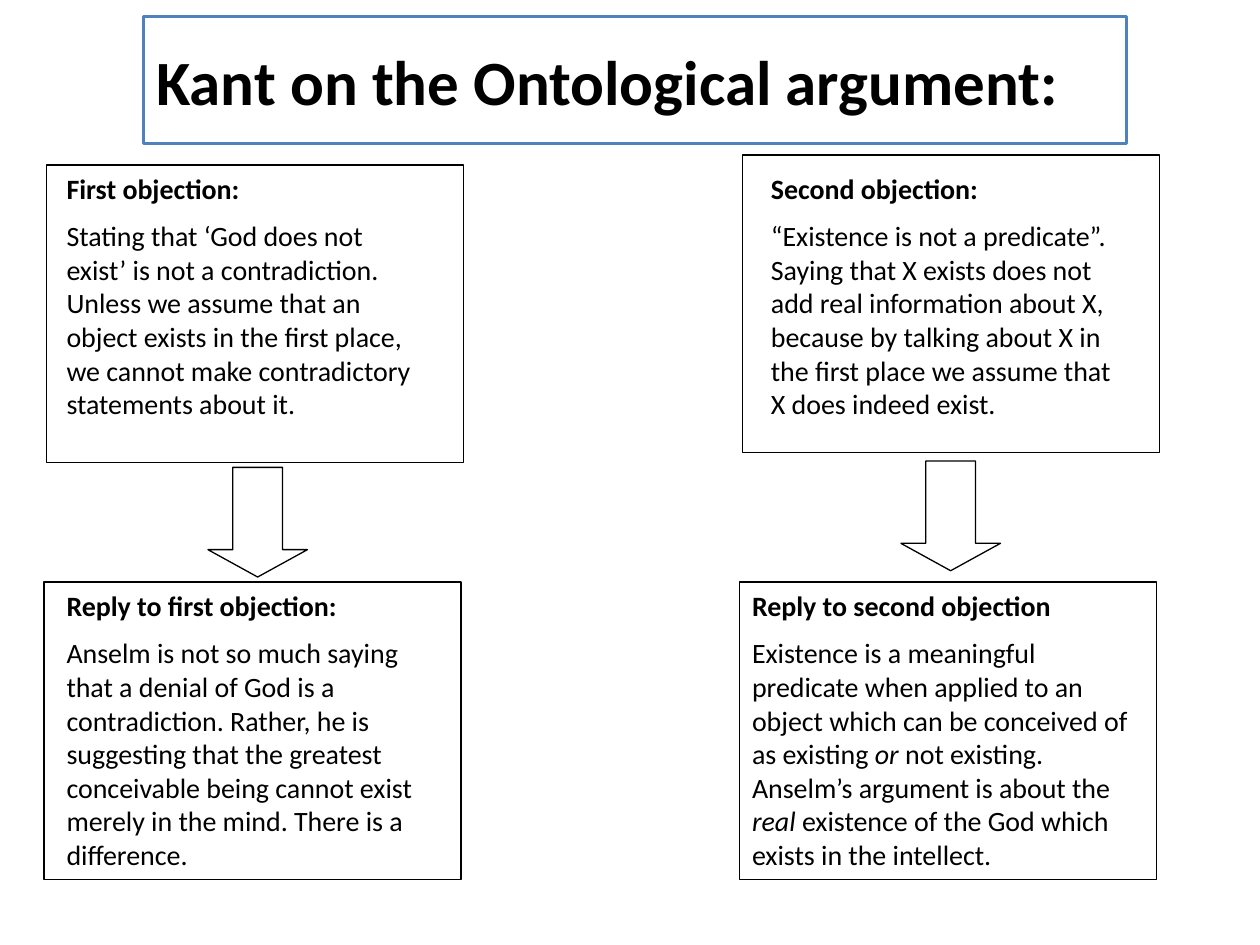
"""Build a slide on Kant's objections to the ontological argument and the replies."""
from pptx import Presentation
from pptx.dml.color import RGBColor
from pptx.enum.shapes import MSO_SHAPE
from pptx.enum.text import MSO_ANCHOR, MSO_AUTO_SIZE, PP_ALIGN
from pptx.util import Inches, Pt

RECTANGLE, DOWN_ARROW = MSO_SHAPE.RECTANGLE, MSO_SHAPE.DOWN_ARROW
LEFT, MIDDLE, TOP = PP_ALIGN.LEFT, MSO_ANCHOR.MIDDLE, MSO_ANCHOR.TOP
NO_FIT = MSO_AUTO_SIZE.NONE
TITLE_ONLY = 5

THEME = {
    "paper": RGBColor(0xFF, 0xFF, 0xFF),
    "ink": RGBColor(0, 0, 0),
    "accent": RGBColor(0x4F, 0x81, 0xBD),
    "font": "Calibri",
    "title_size": Pt(36),
    "body_size": Pt(16),
    "title_line": Pt(2),
    "box_line": Pt(0.75),
    "paragraph_gap": Pt(8),
}

TITLE = "Kant on the Ontological argument:"
TITLE_AREA = (1.14, 0.13, 7.8, 1.01)
BOX_SIZE = (3.31, 2.36)
ARROW_SIZE = (0.79, 0.87)
ARROW_SHAPE = (0.5, 0.275)

ARROWS = [(1.65, 3.71), (7.15, 3.66)]
STATEMENTS = [
    {
        "box": (0.37, 1.31),
        "text_area": (0.43, 1.31, 3.07, 2.12),
        "heading": "First objection:",
        "body": [("Stating that ‘God does not exist’ is not a contradiction. Unless we assume "
                  "that an object exists in the first place, we cannot make contradictory "
                  "statements about it.", False)],
    },
    {
        "box": (0.35, 4.62),
        "text_area": (0.43, 4.62, 3.23, 2.39),
        "heading": "Reply to first objection:",
        "body": [("Anselm is not so much saying that a denial of God is a contradiction. Rather, "
                  "he is suggesting that the greatest conceivable being cannot exist merely in "
                  "the mind. There is a difference.", False)],
    },
    {
        "box": (5.89, 1.23),
        "text_area": (6.02, 1.31, 2.99, 2.12),
        "heading": "Second objection:",
        "body": [("“Existence is not a predicate”. Saying that X exists does not add real "
                  "information about X, because by talking about X in the first place we assume "
                  "that X does indeed exist.", False)],
    },
    {
        "box": (5.87, 4.62),
        "text_area": (5.87, 4.62, 3.31, 2.39),
        "heading": "Reply to second objection",
        "body": [("Existence is a meaningful predicate when applied to an object which can be "
                  "conceived of as existing ", False),
                 ("or", True),
                 (" not existing. Anselm’s argument is about the ", False),
                 ("real", True),
                 (" existence of the God which exists in the intellect.", False)],
    },
]


def apply_format(target, values):
    for attribute, value in values.items():
        setattr(target, attribute, value)


def place(area):
    return [Inches(length) for length in area]


def paint(part, line_color, line_width):
    part.fill.solid()
    part.fill.fore_color.rgb = THEME["paper"]
    part.line.color.rgb = line_color
    part.line.width = line_width


def add_words(paragraph, words, size, bold=False, italic=False):
    run = paragraph.add_run()
    run.text = words
    apply_format(run.font, {"name": THEME["font"], "size": size, "bold": bold, "italic": italic})
    run.font.color.rgb = THEME["ink"]


def add_title(slide):
    title = slide.shapes.title
    apply_format(title, dict(zip(("left", "top", "width", "height"), place(TITLE_AREA))))
    paint(title, THEME["accent"], THEME["title_line"])
    apply_format(title.text_frame, {"auto_size": NO_FIT, "vertical_anchor": MIDDLE,
                                    "word_wrap": True})
    heading = title.text_frame.paragraphs[0]
    heading.alignment = LEFT
    add_words(heading, TITLE, THEME["title_size"], bold=True)


def add_outline(slide, preset, corner, size):
    outline = slide.shapes.add_shape(preset, *place(corner + size))
    outline.shadow.inherit = False
    paint(outline, THEME["ink"], THEME["box_line"])
    return outline


def add_statement(slide, statement):
    frame = slide.shapes.add_textbox(*place(statement["text_area"])).text_frame
    apply_format(frame, {"word_wrap": True, "auto_size": NO_FIT, "vertical_anchor": TOP})
    add_words(frame.paragraphs[0], statement["heading"], THEME["body_size"], bold=True)
    body = frame.add_paragraph()
    body.space_before = THEME["paragraph_gap"]
    for words, italic in statement["body"]:
        add_words(body, words, THEME["body_size"], italic=italic)


def main():
    deck = Presentation()
    apply_format(deck, {"slide_width": Inches(10), "slide_height": Inches(7.5)})
    slide = deck.slides.add_slide(deck.slide_layouts[TITLE_ONLY])
    add_title(slide)
    for statement in STATEMENTS:
        add_outline(slide, RECTANGLE, statement["box"], BOX_SIZE)
    for corner in ARROWS:
        arrow = add_outline(slide, DOWN_ARROW, corner, ARROW_SIZE)
        for index, ratio in enumerate(ARROW_SHAPE):
            arrow.adjustments[index] = ratio
    for statement in STATEMENTS:
        add_statement(slide, statement)
    deck.save("out.pptx")


if __name__ == "__main__":
    main()
